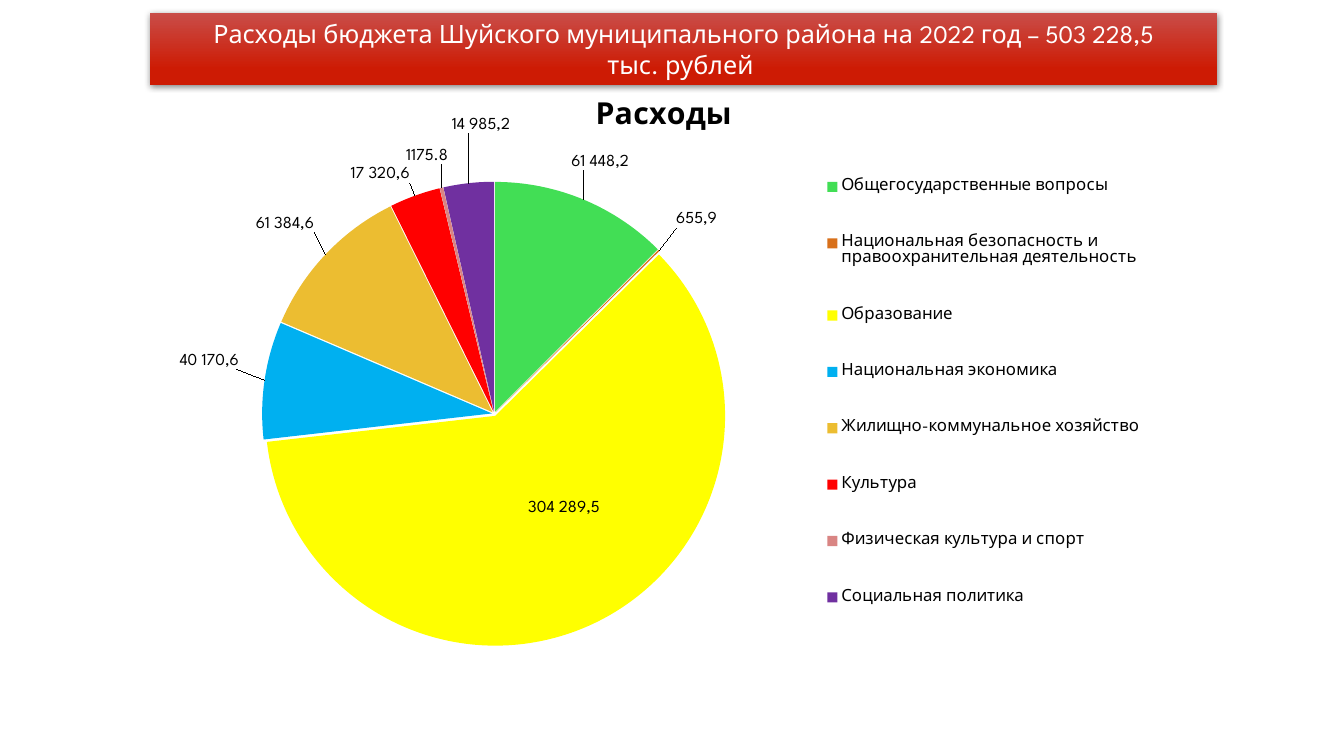
from lxml import etree
from pptx import Presentation
from pptx.chart.data import CategoryChartData
from pptx.dml.color import RGBColor
from pptx.enum.chart import XL_CHART_TYPE, XL_LABEL_POSITION, XL_LEGEND_POSITION
from pptx.enum.shapes import MSO_SHAPE
from pptx.enum.text import MSO_ANCHOR, MSO_AUTO_SIZE, PP_ALIGN
from pptx.oxml import parse_xml
from pptx.oxml.ns import nsdecls, qn
from pptx.util import Inches, Pt

# Content
FONT = "League Spartan"
COLORS = {
    "black": "000000", "white": "FFFFFF",
    "banner_top": "C94D48", "banner_bottom": "CD1B04",
    "green": "42DE55", "orange": "D8701A", "yellow": "FFFF00", "blue": "00B0F0",
    "gold": "ECBD31", "red": "FF0000", "pink": "D98583", "purple": "7030A0",
}
BANNER_LINES = [
    "Расходы бюджета Шуйского муниципального района на 2022 год – 503 228,5",
    "тыс. рублей ",
]
CHART_TITLE = "Расходы"
# category, value, colour, label text (None shows the value), label shift (x, y) in inches
EXPENSES = [
    ("Общегосударственные вопросы", 59834.7, "green", "61 448,2", (-0.14, -0.23)),
    ("Национальная безопасность и правоохранительная деятельность",
     452, "orange", "655,9", (0.13, -0.18)),
    ("Образование", 289737.3, "yellow", "304 289,5", (0.19, -0.11)),
    ("Национальная экономика", 39459.7, "blue", "40 170,6", (-0.22, -0.1)),
    ("Жилищно-коммунальное хозяйство", 53678.3, "gold", "61 384,6", (-0.07, -0.18)),
    ("Культура ", 17021.5, "red", "17 320,6", (-0.03, -0.07)),
    ("Физическая культура и спорт", 1175.8, "pink", None, (0.08, -0.17)),
    ("Социальная политика", 16870.6, "purple", "14 985,2", (0.42, -0.43)),
]
INSIDE_LABEL = "Образование"
CHART_BOX = (1.78, 0.76, 9.61, 6.14)
PLOT_LAYOUT = {"x": 0.05, "y": 0.17, "w": 0.55, "h": 0.75}
LEGEND_LAYOUT = {"x": 0.66, "y": 0.1, "w": 0.34, "h": 0.82}


def color(name):
    return RGBColor.from_string(COLORS[name])


def style_font(font, size, color_name="black", bold=False):
    font.name, font.size, font.bold = FONT, Pt(size), bold
    font.color.rgb = color(color_name)


def manual_layout(values, inner=False, edge=True):
    layout = parse_xml(f"<c:layout {nsdecls('c')}/>")
    manual = etree.SubElement(layout, qn("c:manualLayout"))
    settings = {"layoutTarget": "inner"} if inner else {}
    if edge:
        settings.update(xMode="edge", yMode="edge")
    settings.update(values)
    for tag, value in settings.items():
        etree.SubElement(manual, qn(f"c:{tag}")).set("val", str(value))
    return layout


presentation = Presentation()
presentation.slide_width, presentation.slide_height = Inches(13.33), Inches(7.5)
slide = presentation.slides.add_slide(presentation.slide_layouts[6])

# Banner
banner = slide.shapes.add_shape(
    MSO_SHAPE.RECTANGLE, Inches(1.49), Inches(0.13), Inches(10.58), Inches(0.71))
banner.line.fill.background()
banner.fill.gradient()
banner.fill.gradient_angle = 270
stops = banner.fill.gradient_stops
for stop, name, position in zip(stops, ("banner_top", "banner_bottom"), (0, 0.78)):
    stop.color.rgb, stop.position = color(name), position
banner.shadow.inherit = False
effects = banner._element.spPr.find(qn("a:effectLst"))
effects.append(parse_xml(
    f'<a:outerShdw {nsdecls("a")} blurRad="{Pt(4.5)}" dist="{Pt(1.5)}" dir="5400000" '
    f'rotWithShape="0"><a:srgbClr val="{COLORS["black"]}"><a:alpha val="48000"/>'
    '</a:srgbClr></a:outerShdw>'))
frame = banner.text_frame
frame.word_wrap, frame.vertical_anchor = True, MSO_ANCHOR.MIDDLE
frame.auto_size = MSO_AUTO_SIZE.SHAPE_TO_FIT_TEXT
frame.text = "\n".join(BANNER_LINES)
for paragraph in frame.paragraphs:
    paragraph.alignment = PP_ALIGN.CENTER
    style_font(paragraph.font, 18, "white")

# Pie chart
data = CategoryChartData()
data.categories = [row[0] for row in EXPENSES]
data.add_series(CHART_TITLE, [row[1] for row in EXPENSES])
chart = slide.shapes.add_chart(
    XL_CHART_TYPE.PIE, *map(Inches, CHART_BOX), data).chart
style_font(chart.font, 18)
chart.has_title = True
chart.chart_title.include_in_layout = False
chart.chart_title.text_frame.text = CHART_TITLE
style_font(chart.chart_title.text_frame.paragraphs[0].font, 21.6, bold=True)

plot = chart.plots[0]
plot.vary_by_categories = True
plot_area = chart._chartSpace.chart.plotArea
for old_layout in plot_area.findall(qn("c:layout")):
    plot_area.remove(old_layout)
plot_area.insert(0, manual_layout(PLOT_LAYOUT, inner=True))

# Legend
chart.has_legend = True
chart.legend.position = XL_LEGEND_POSITION.RIGHT
chart.legend.include_in_layout = False
style_font(chart.legend.font, 12)
legend = chart.legend._element
for old_layout in legend.findall(qn("c:layout")):
    legend.remove(old_layout)
legend.find(qn("c:legendPos")).addnext(manual_layout(LEGEND_LAYOUT))

# Slices and their labels
series = plot.series[0]
labels = series.data_labels
labels.show_value = True
style_font(labels.font, 12)
leader_lines = labels._element.find(qn("c:showLeaderLines"))
if leader_lines is None:
    leader_lines = etree.SubElement(labels._element, qn("c:showLeaderLines"))
leader_lines.set("val", "1")
for index, (category, value, color_name, text, shift) in enumerate(EXPENSES):
    point = series.points[index]
    point.format.fill.solid()
    point.format.fill.fore_color.rgb = color(color_name)
    label = point.data_label
    if text:
        label.text_frame.text = text
        style_font(label.text_frame.paragraphs[0].font, 12)
    else:
        style_font(label.font, 12)
    label.position = (XL_LABEL_POSITION.CENTER if category == INSIDE_LABEL
                      else XL_LABEL_POSITION.OUTSIDE_END)
    element = labels._element.findall(qn("c:dLbl"))[index]
    offset = {"x": round(shift[0] / CHART_BOX[2], 4), "y": round(shift[1] / CHART_BOX[3], 4)}
    element.find(qn("c:idx")).addnext(manual_layout(offset, edge=False))

# Slight gap between slices
series._element.find(qn("c:dPt")).addprevious(
    parse_xml(f'<c:explosion {nsdecls("c")} val="1"/>'))

presentation.save("out.pptx")
